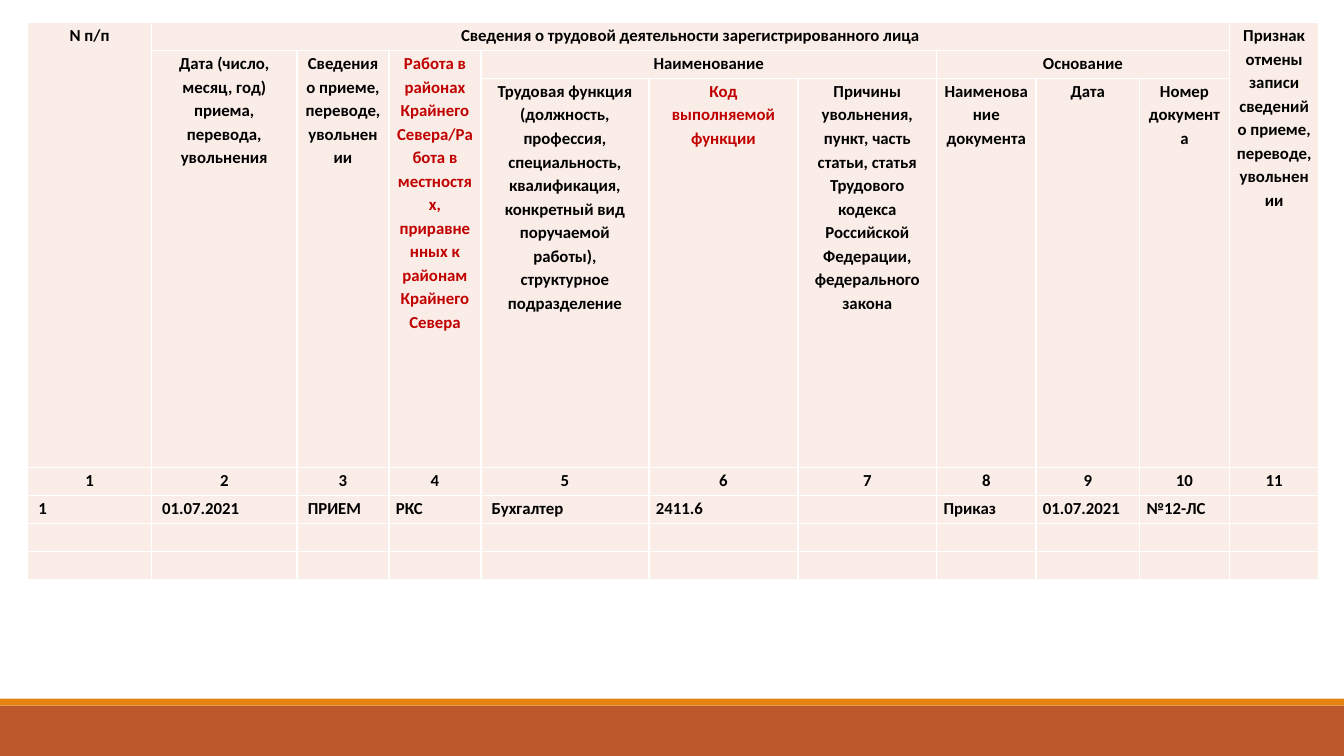
from lxml import etree
from pptx import Presentation
from pptx.dml.color import RGBColor
from pptx.enum.shapes import MSO_SHAPE
from pptx.enum.text import PP_ALIGN
from pptx.oxml.ns import qn
from pptx.util import Pt

RECT = MSO_SHAPE.RECTANGLE
CENTER, JUSTIFY = PP_ALIGN.CENTER, PP_ALIGN.JUSTIFY

BLACK = RGBColor(0, 0, 0)
RED = RGBColor(0xC0, 0, 0)
WHITE = RGBColor(0xFF, 0xFF, 0xFF)
PINK = RGBColor(0xFA, 0xED, 0xE7)
ORANGE = RGBColor(0xE4, 0x83, 0x12)
RUST = RGBColor(0xBD, 0x58, 0x2C)

WIDE, HIGH = 960, 540
COLS = [88.5, 104, 65.7, 65.7, 120, 106.5, 99, 71, 74, 64.2, 64]
ROWS = [19.9, 19.9, 278.2, 19.9, 19.9, 19.9, 19.9]

# Header cells: row, column, rows spanned, columns spanned, text, colour
HEADS = [
    (0, 0, 3, 1, "N п/п", BLACK),
    (0, 1, 1, 9, "Сведения о трудовой деятельности зарегистрированного лица", BLACK),
    (0, 10, 3, 1, "Признак отмены записи сведений о приеме, переводе, увольнении", BLACK),
    (1, 1, 2, 1, "Дата (число, месяц, год) приема, перевода, увольнения", BLACK),
    (1, 2, 2, 1, "Сведения о приеме, переводе, увольнении", BLACK),
    (1, 3, 2, 1, "Работа в районах Крайнего Севера/Работа в\n"
                 "местностях, приравненных к районам Крайнего Севера", RED),
    (1, 4, 1, 3, "Наименование", BLACK),
    (1, 7, 1, 3, "Основание", BLACK),
    (2, 4, 1, 1, "Трудовая функция (должность, профессия, специальность, "
                 "квалификация, конкретный вид поручаемой работы), "
                 "структурное подразделение", BLACK),
    (2, 5, 1, 1, "Код выполняемой функции", RED),
    (2, 6, 1, 1, "Причины увольнения, пункт, часть статьи, статья Трудового "
                 "кодекса Российской Федерации, федерального закона", BLACK),
    (2, 7, 1, 1, "Наименование документа", BLACK),
    (2, 8, 1, 1, "Дата", BLACK),
    (2, 9, 1, 1, "Номер документа", BLACK),
]
ENTRY = [" 1", " 01.07.2021", " ПРИЕМ", "РКС", " Бухгалтер", "2411.6", "",
         "Приказ", "01.07.2021", "№12-ЛС", ""]
BODY = [[str(n + 1) for n in range(len(COLS))], ENTRY,
        [""] * len(COLS), [""] * len(COLS)]


def write(frame, text, color=BLACK, align=CENTER, size=12):
    for i, line in enumerate(text.split("\n")):
        para = frame.paragraphs[0] if i == 0 else frame.add_paragraph()
        para.alignment = align
        para.line_spacing = 1.15
        if not line:
            # Keeps an empty row as low as a filled one
            end = etree.SubElement(para._p, qn("a:endParaRPr"))
            end.set("sz", str(size * 100))
            continue
        run = para.add_run()
        run.text = line
        font = run.font
        font.name, font.size, font.bold = "Calibri", Pt(size), True
        font.color.rgb = color


def dress(cell):
    cell.fill.solid()
    cell.fill.fore_color.rgb = PINK
    cell.margin_left = cell.margin_right = Pt(5)
    cell.margin_top = cell.margin_bottom = 0
    props = cell._tc.get_or_add_tcPr()
    for i, side in enumerate("LRTB"):
        line = etree.Element(qn("a:ln" + side), w=str(Pt(1)))
        fill = etree.SubElement(line, qn("a:solidFill"))
        etree.SubElement(fill, qn("a:srgbClr"), val=str(WHITE))
        props.insert(i, line)


def bar(slide, x, y, w, h, color):
    shape = slide.shapes.add_shape(RECT, Pt(x), Pt(y), Pt(w), Pt(h))
    shape.shadow.inherit = False
    shape.fill.solid()
    shape.fill.fore_color.rgb = color
    shape.line.fill.background()


def footer(slide, x, y, w, h):
    thin = 5
    bar(slide, x, y + thin, w, h - thin, RUST)
    bar(slide, x, y, w, thin, ORANGE)


def record(slide, x, y):
    frame = slide.shapes.add_table(len(ROWS), len(COLS), Pt(x), Pt(y),
                                   Pt(sum(COLS)), Pt(sum(ROWS)))
    table = frame.table
    table.first_row = table.horz_banding = False
    for col, w in zip(table.columns, COLS):
        col.width = Pt(w)
    for row, h in zip(table.rows, ROWS):
        row.height = Pt(h)
    for cell in table.iter_cells():
        dress(cell)

    # Merged header
    for r, c, down, across, text, color in HEADS:
        cell = table.cell(r, c)
        if down * across > 1:
            cell.merge(table.cell(r + down - 1, c + across - 1))
        write(cell.text_frame, text, color=color)

    # Column numbers and entries
    for r, line in enumerate(BODY):
        for c, text in enumerate(line):
            write(table.cell(r + 3, c).text_frame, text,
                  align=JUSTIFY if r else CENTER)


def main():
    deck = Presentation()
    deck.slide_width, deck.slide_height = Pt(WIDE), Pt(HIGH)
    slide = deck.slides.add_slide(deck.slide_layouts[6])
    footer(slide, 0, 499, WIDE, HIGH - 499)
    record(slide, 19.7, 16.2)
    deck.save("out.pptx")


if __name__ == "__main__":
    main()
